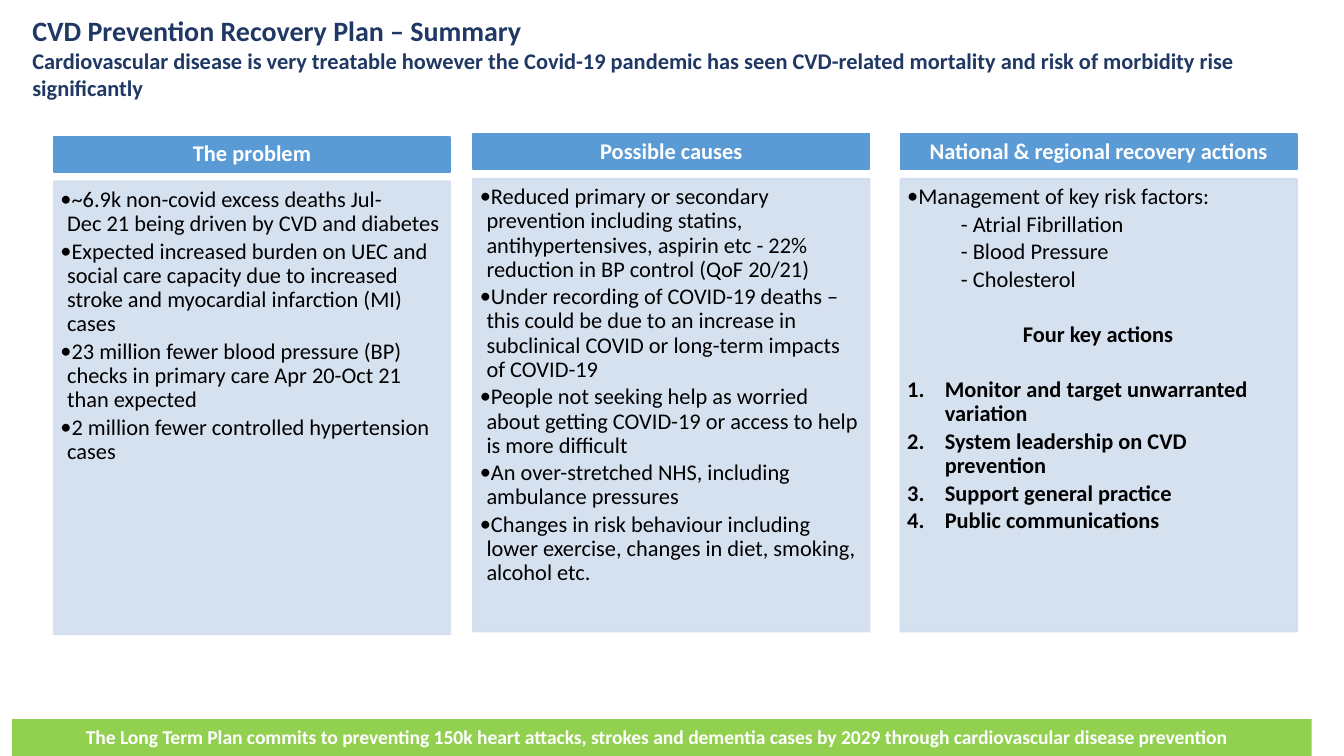
from dataclasses import dataclass
from lxml.etree import SubElement
from pptx import Presentation
from pptx.dml.color import RGBColor
from pptx.enum.shapes import MSO_SHAPE
from pptx.enum.text import MSO_ANCHOR, MSO_AUTO_SIZE, PP_ALIGN
from pptx.oxml.ns import qn
from pptx.util import Inches, Pt


@dataclass(frozen=True)
class Theme:
    font: str = "Calibri"
    navy: str = "203864"
    blue: str = "5B9BD5"
    pale: str = "D2DEEF"
    green: str = "92D050"
    white: str = "FFFFFF"
    black: str = "000000"
    title: float = 15
    body: float = 12
    foot: float = 10.5


@dataclass
class Item:
    text: str
    kind: str = "dot"


class Deck:
    def __init__(self, theme, slide):
        self.theme = theme
        self.slide = slide

    def style(self, par, size, color, bold=False):
        for run in par.runs:
            run.font.name = self.theme.font
            run.font.size = Pt(size)
            run.font.bold = bold
            run.font.color.rgb = RGBColor.from_string(color)

    def frame(self, shape, insets, anchor):
        frame = shape.text_frame
        frame.word_wrap = True
        frame.auto_size = MSO_AUTO_SIZE.NONE
        frame.vertical_anchor = anchor
        (frame.margin_left, frame.margin_top,
         frame.margin_right, frame.margin_bottom) = map(Inches, insets)
        return frame

    def box(self, area, color, edge=True, alpha=None):
        shape = self.slide.shapes.add_shape(MSO_SHAPE.RECTANGLE, *map(Inches, area))
        shape.shadow.inherit = False
        shape.fill.solid()
        shape.fill.fore_color.rgb = RGBColor.from_string(color)
        if edge:
            shape.line.color.rgb = RGBColor.from_string(color)
            shape.line.width = Pt(1)
        else:
            shape.line.fill.background()
        if alpha:
            for tint in shape.element.spPr.iter(qn("a:srgbClr")):
                SubElement(tint, qn("a:alpha"), val=str(alpha * 1000))
        return shape

    def title(self, area, head, lead):
        shape = self.slide.shapes.title
        shape.left, shape.top, shape.width, shape.height = map(Inches, area)
        frame = self.frame(shape, (0.07, 0.04, 0.07, 0.04), MSO_ANCHOR.TOP)
        frame.text = f"{head}\n{lead}"
        for par, size in zip(frame.paragraphs, (self.theme.title, self.theme.body)):
            par.alignment = PP_ALIGN.LEFT
            par.space_before = Pt(0)
            self.style(par, size, self.theme.navy, True)

    def label(self, area, text, color, size, insets, edge=True):
        shape = self.box(area, color, edge)
        frame = self.frame(shape, insets, MSO_ANCHOR.MIDDLE)
        frame.text = text
        par = frame.paragraphs[0]
        par.alignment = PP_ALIGN.CENTER
        par.line_spacing = 0.9
        self.style(par, size, self.theme.white, True)

    def mark(self, par, left, hang, tag=None, **attrs):
        props = par._p.get_or_add_pPr()
        props.set("marL", str(Inches(left)))
        props.set("indent", str(Inches(-hang)))
        if tag:
            SubElement(props, qn("a:buFont"), typeface=self.theme.font)
            SubElement(props, qn(tag), **attrs)

    def panel(self, area, items):
        shape = self.box(area, self.theme.pale, alpha=90)
        frame = self.frame(shape, (0.05, 0.05, 0.06, 0.07), MSO_ANCHOR.TOP)
        frame.text = "\n".join(item.text for item in items)
        for par, item in zip(frame.paragraphs, items):
            par.alignment = PP_ALIGN.LEFT
            if item.kind == "dot":
                self.mark(par, 0.05, 0.05, "a:buChar", char="•")
            elif item.kind == "step":
                self.mark(par, 0.28, 0.28, "a:buAutoNum", type="arabicPeriod")
            elif item.kind == "sub":
                self.mark(par, 0.4, 0)
            par.line_spacing = 0.9
            par.space_after = Pt(1.8)
            if item.kind == "head":
                par.alignment = PP_ALIGN.CENTER
                par.space_before = Pt(14.8)
                par.space_after = Pt(16.6)
            self.style(par, self.theme.body, self.theme.black,
                       item.kind in ("head", "step"))

    def column(self, left, top, head, items):
        self.label((left, top, 2.95, 0.26), head, self.theme.blue,
                   self.theme.body, (0.06, 0.04, 0.06, 0.04))
        self.panel((left, top + 0.33, 2.95, 3.37), items)


# Text of the three columns: left, top, heading, items
COLUMNS = [
    (0.4, 1.02, "The problem", [
        Item("~6.9k non-covid excess deaths Jul-Dec\u00a021 being driven by CVD and diabetes"),
        Item("Expected increased burden on UEC and social care capacity due to "
             "increased stroke and myocardial infarction (MI) cases"),
        Item("23 million fewer blood pressure (BP) checks in primary care "
             "Apr 20-Oct 21 than expected"),
        Item("2 million fewer controlled hypertension cases"),
    ]),
    (3.52, 1, "Possible causes", [
        Item("Reduced primary or secondary prevention including statins, "
             "antihypertensives, aspirin etc - 22% reduction in BP control (QoF 20/21)"),
        Item("Under recording of COVID-19 deaths – this could be due to an increase "
             "in subclinical COVID or long-term impacts of COVID-19"),
        Item("People not seeking help as worried about getting COVID-19 or access "
             "to help is more difficult"),
        Item("An over-stretched NHS, including ambulance pressures"),
        Item("Changes in risk behaviour including lower exercise, changes in diet, "
             "smoking, alcohol etc."),
    ]),
    (6.7, 1, "National & regional recovery actions", [
        Item("Management of key risk factors:"),
        Item("- Atrial Fibrillation", "sub"),
        Item("- Blood Pressure", "sub"),
        Item("- Cholesterol", "sub"),
        Item("Four key actions", "head"),
        Item("Monitor and target unwarranted variation", "step"),
        Item("System leadership on CVD prevention", "step"),
        Item("Support general practice", "step"),
        Item("Public communications", "step"),
    ]),
]


def main():
    show = Presentation()
    # Wide 16:9 page
    show.slide_width = Inches(10)
    show.slide_height = show.slide_width * 9 // 16
    theme = Theme()
    deck = Deck(theme, show.slides.add_slide(show.slide_layouts[5]))

    # Title and lead
    deck.title((0.17, 0.06, 9.83, 0.73), "CVD Prevention Recovery Plan – Summary",
               "Cardiovascular disease is very treatable however the Covid-19 pandemic "
               "has seen CVD-related mortality and risk of morbidity rise significantly")

    # Footer band
    deck.label((0.09, 5.35, 9.67, 0.28),
               "The Long Term Plan commits to preventing 150k heart attacks, strokes and "
               "dementia cases by 2029 through cardiovascular disease prevention",
               theme.green, theme.foot, (0.1, 0.05, 0.17, 0.05), edge=False)

    # Columns
    for column in COLUMNS:
        deck.column(*column)

    show.save("out.pptx")


if __name__ == "__main__":
    main()
